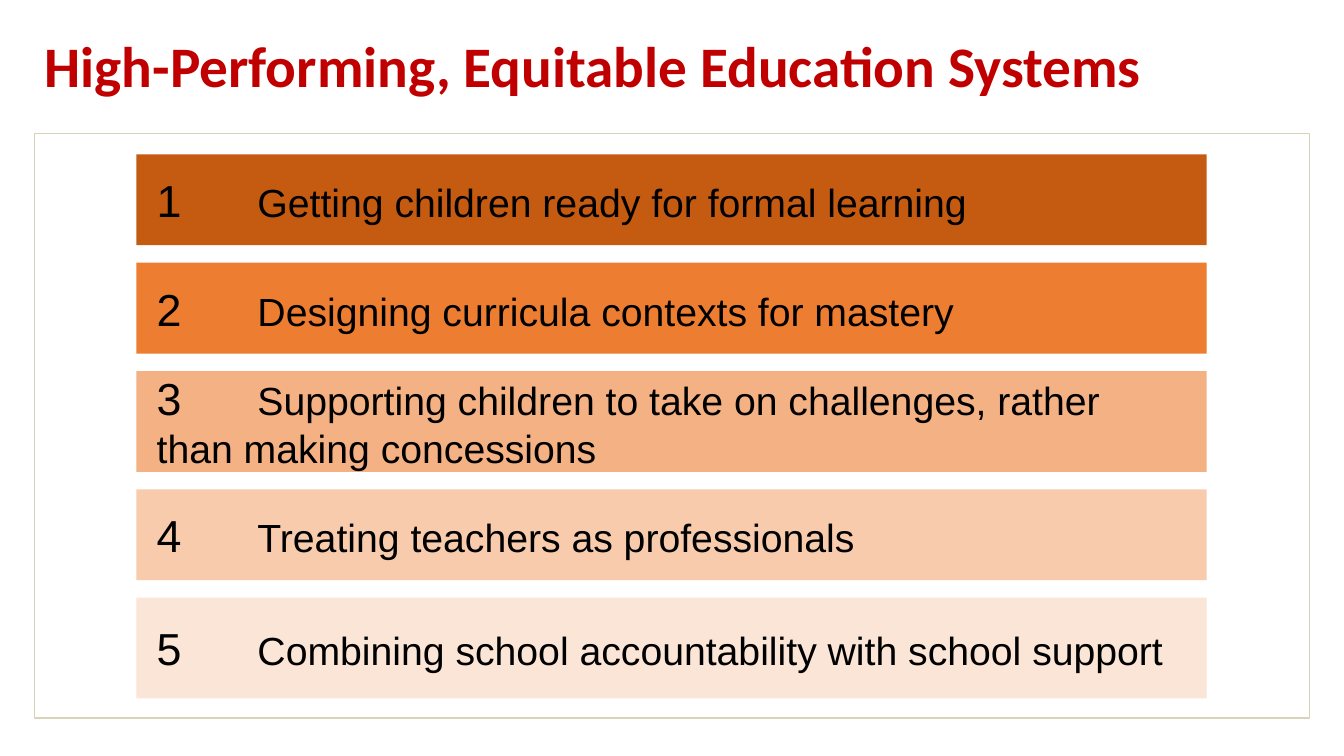
from dataclasses import dataclass

from lxml import etree
from pptx import Presentation
from pptx.dml.color import RGBColor
from pptx.enum.shapes import MSO_SHAPE
from pptx.enum.text import MSO_ANCHOR, MSO_AUTO_SIZE, PP_ALIGN
from pptx.oxml.ns import qn
from pptx.util import Cm, Pt

RECTANGLE = MSO_SHAPE.RECTANGLE
MIDDLE = MSO_ANCHOR.MIDDLE
LEFT = PP_ALIGN.LEFT
NO_AUTOFIT = MSO_AUTO_SIZE.NONE
TITLE_ONLY = 5

FRAME_LEFT, FRAME_WIDTH = 0.87, 32.13
BAR_LEFT, BAR_WIDTH = 3.44, 26.97
FIRST_BAR_TOP, BAR_GAP = 3.89, 0.44
LABEL_TAB = 2.54


@dataclass
class Principle:
    label: str
    fill: str
    height: float = 2.29


PRINCIPLES = [
    Principle("Getting children ready for formal learning", "C55A11"),
    Principle("Designing curricula contexts for mastery", "ED7D31"),
    Principle("Supporting children to take on challenges, rather than making concessions",
              "F4B183", 2.54),
    Principle("Treating teachers as professionals", "F8CBAD"),
    Principle("Combining school accountability with school support", "FBE5D6", 2.54),
]


def colour(value: str) -> RGBColor:
    return RGBColor.from_string(value)


def add_span(para, text: str, size: float, font: str = "Arial",
             hex_colour: str = "000000", bold: bool = False) -> None:
    span = para.add_run()
    span.text = text
    span.font.name = font
    span.font.size = Pt(size)
    span.font.bold = bold
    span.font.color.rgb = colour(hex_colour)


def add_tab_stop(para, position: float) -> None:
    tabs = etree.SubElement(para._p.get_or_add_pPr(), qn("a:tabLst"))
    etree.SubElement(tabs, qn("a:tab"), pos=str(Cm(position)), algn="l")


def add_box(page, left: float, top: float, width: float, height: float):
    box = page.shapes.add_shape(RECTANGLE, Cm(left), Cm(top), Cm(width), Cm(height))
    box.shadow.inherit = False
    return box


def add_title(page, text: str) -> None:
    title = page.shapes.title
    title.left, title.top = Cm(FRAME_LEFT), Cm(0.76)
    title.width, title.height = Cm(FRAME_WIDTH), Cm(1.98)
    frame = title.text_frame
    frame.auto_size = NO_AUTOFIT
    frame.vertical_anchor = MIDDLE
    para = frame.paragraphs[0]
    para.alignment = LEFT
    para.line_spacing = 0.9
    add_span(para, text, 40.9, "Calibri", "C00000", bold=True)


def add_frame(page) -> None:
    box = add_box(page, FRAME_LEFT, 3.36, FRAME_WIDTH, 14.73)
    box.fill.background()
    box.line.color.rgb = colour("D8D4BA")
    box.line.width = Pt(1)


def add_bar(page, number: int, principle: Principle, top: float) -> None:
    box = add_box(page, BAR_LEFT, top, BAR_WIDTH, principle.height)
    box.fill.solid()
    box.fill.fore_color.rgb = colour(principle.fill)
    box.line.fill.background()
    frame = box.text_frame
    frame.word_wrap = True
    frame.vertical_anchor = MIDDLE
    frame.margin_left, frame.margin_right = Cm(0.51), Cm(0.76)
    frame.margin_top = frame.margin_bottom = Cm(0)
    para = frame.paragraphs[0]
    para.alignment = LEFT
    add_tab_stop(para, LABEL_TAB)
    add_span(para, str(number), 32)
    add_span(para, f"\t{principle.label}", 28)


def main() -> None:
    deck = Presentation()
    deck.slide_width, deck.slide_height = Cm(33.87), Cm(19.05)
    page = deck.slides.add_slide(deck.slide_layouts[TITLE_ONLY])

    # Heading and outer frame
    add_title(page, "High-Performing, Equitable Education Systems")
    add_frame(page)

    # Numbered bars, stacked with equal gaps
    top = FIRST_BAR_TOP
    for number, principle in enumerate(PRINCIPLES, start=1):
        add_bar(page, number, principle, top)
        top += principle.height + BAR_GAP

    deck.save("out.pptx")


if __name__ == "__main__":
    main()
